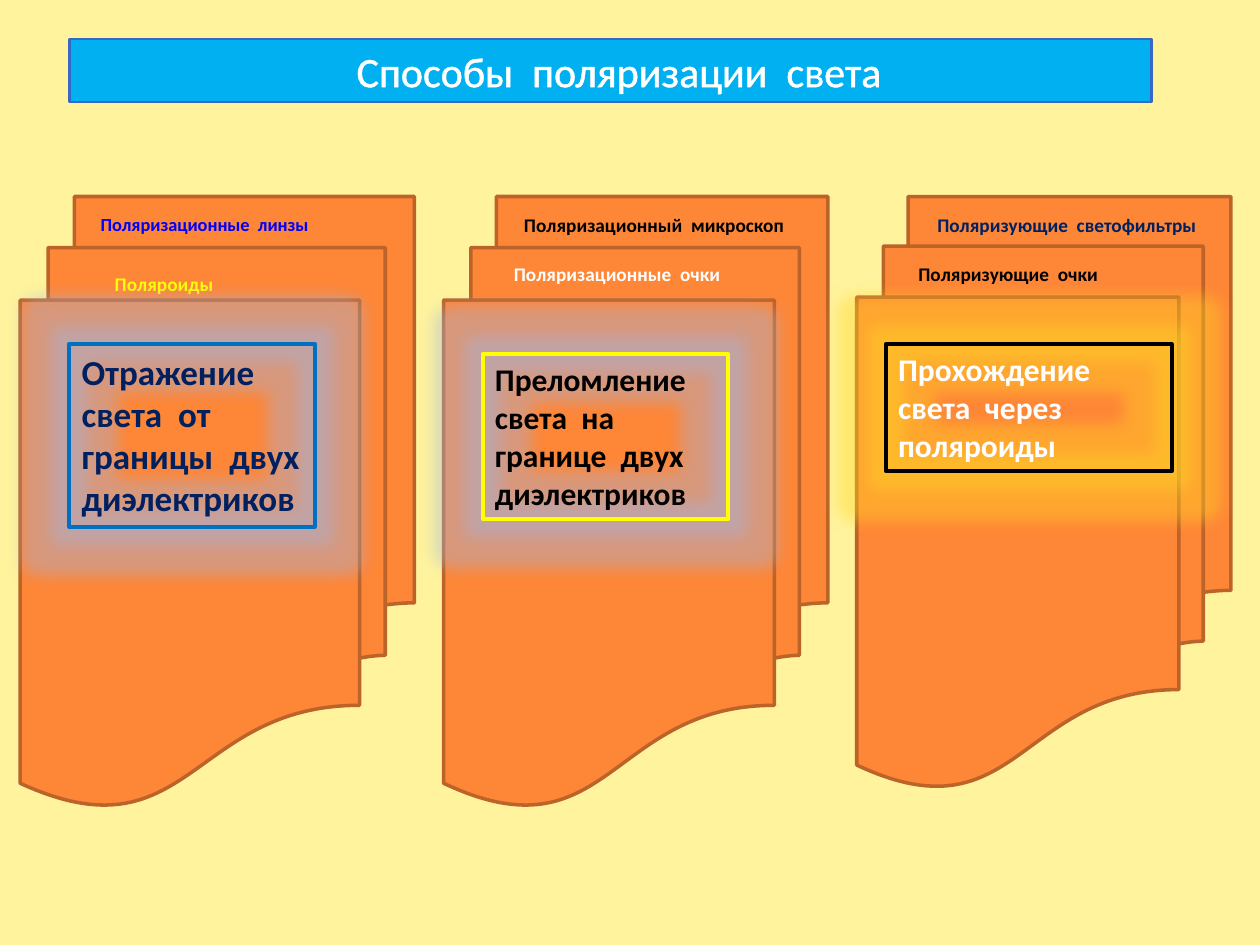
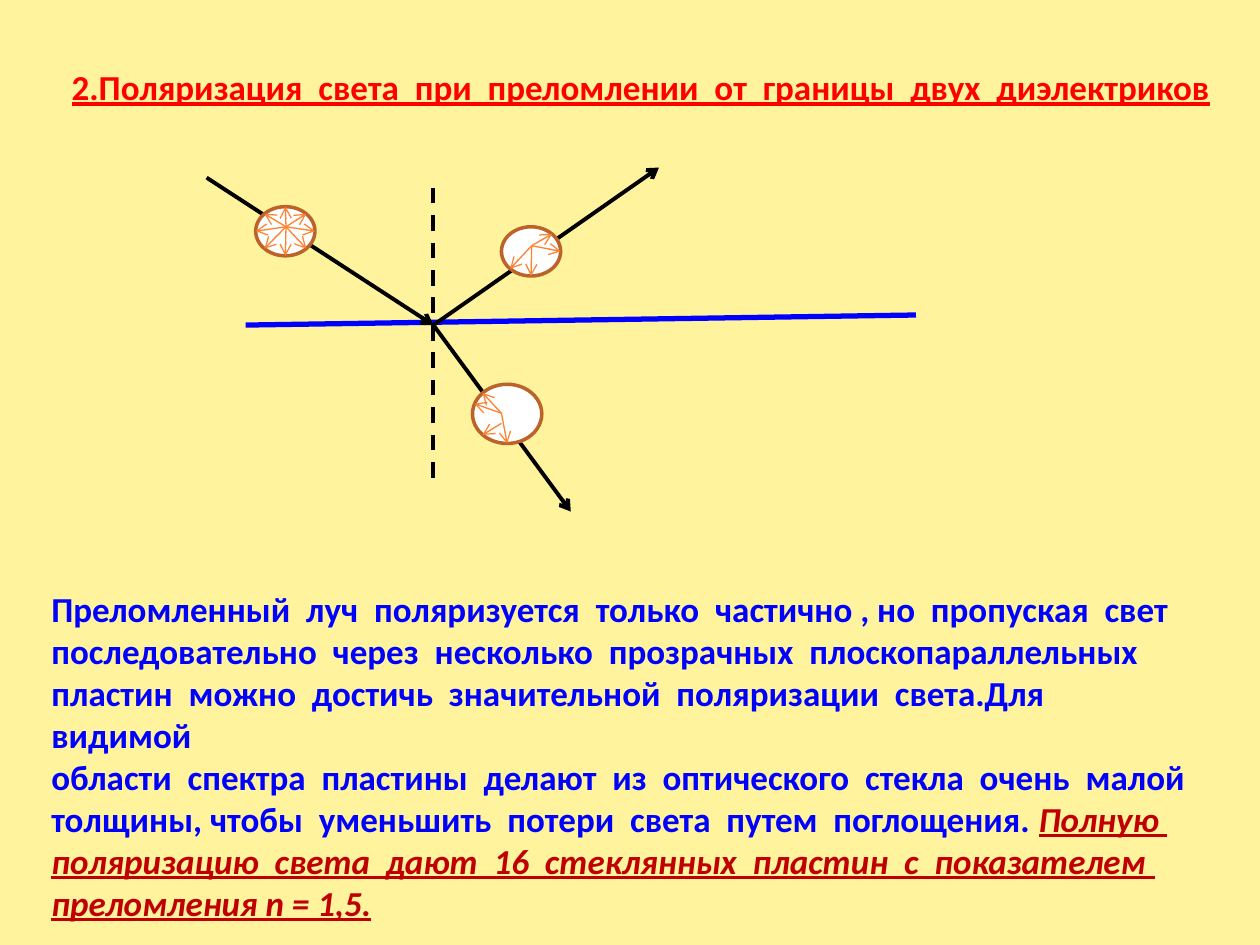
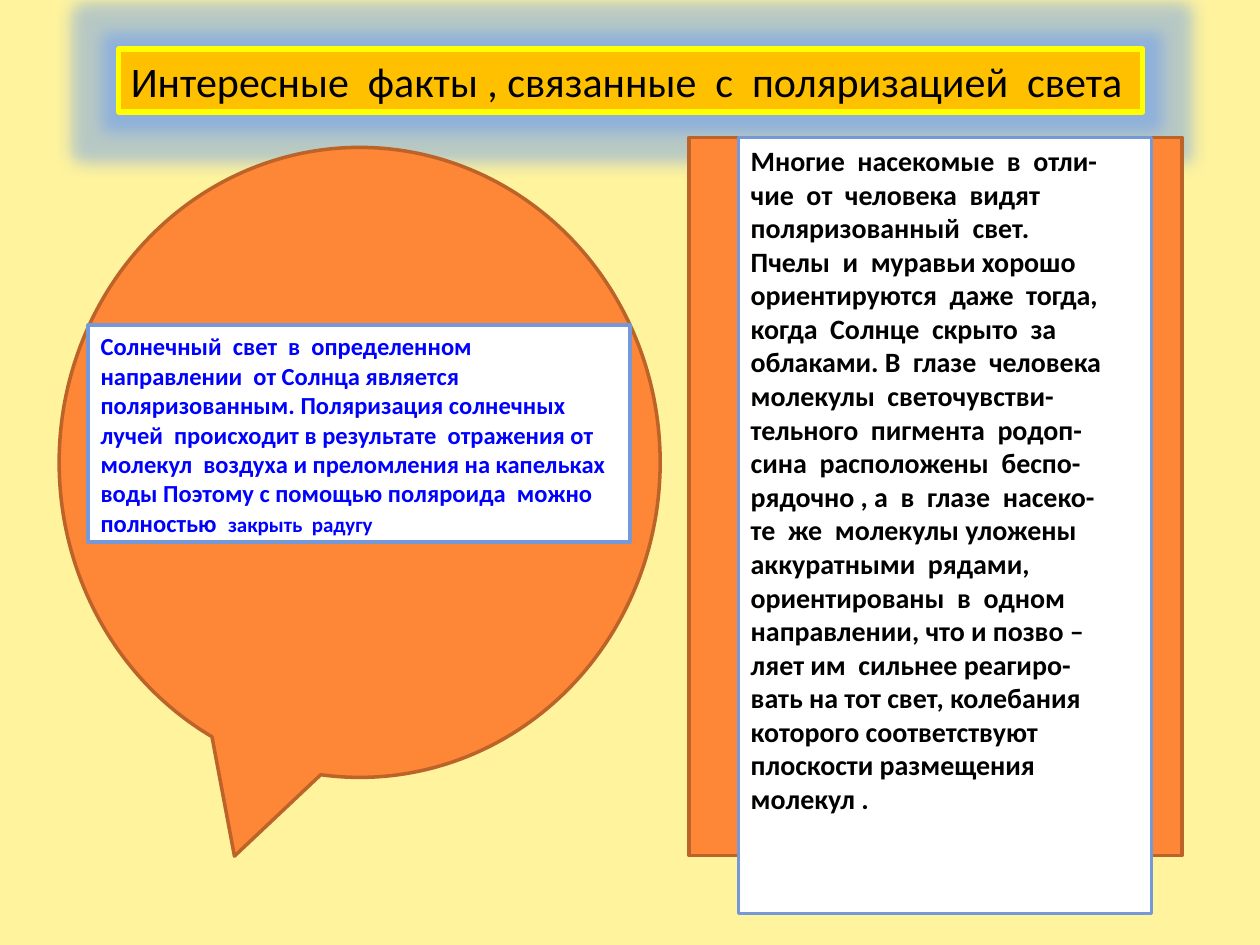
import math

import pptx
import pptx.dml.color
import pptx.enum.dml
import pptx.enum.shapes
import pptx.enum.text
import pptx.oxml
import pptx.oxml.ns
import pptx.util

RGB = pptx.dml.color.RGBColor
SHAPE = pptx.enum.shapes.MSO_SHAPE
qn = pptx.oxml.ns.qn

# Shared colours
PAPER = RGB(0xFF, 0xF3, 0x9D)
ORANGE = RGB(0xFE, 0x86, 0x37)
RUST = RGB(0xBC, 0x63, 0x29)
SPOKE = RGB(0xFD, 0x82, 0x31)
BLACK = RGB(0, 0, 0)
WHITE = RGB(0xFF, 0xFF, 0xFF)
BLUE = RGB(0, 0, 0xFF)
NAVY = RGB(0, 0x20, 0x60)
YELLOW = RGB(0xFF, 0xFF, 0)
RED = RGB(0xFF, 0, 0)
DARK_RED = RGB(0xC0, 0, 0)
SKY = RGB(0, 0xB0, 0xF0)
ROYAL = RGB(0x36, 0x68, 0xC4)
OCEAN = RGB(0, 0x70, 0xC0)
AMBER = RGB(0xFF, 0xC0, 0)
STEEL = RGB(0x75, 0x98, 0xD9)
BLUE_GLOW = RGB(0x4F, 0x8C, 0xFF)
PALE_GLOW = RGB(0xA0, 0xB5, 0xE4)
GOLD_GLOW = RGB(0xFF, 0xD8, 0x23)

# The slide is a grid of square cells
COLUMNS, ROWS = 100, 75
CELL = pptx.util.Inches(0.1)
PAGE = (0, 0, COLUMNS, ROWS)
FONT = "Calibri"
FIGURE = {"fill": ORANGE, "line": RUST, "width": 2}
NOTE = {"fill": WHITE, "line": STEEL, "width": 2}


def cells(*counts):
    return [round(count * CELL) for count in counts]


def within(box, left, top, width, height):
    """Box offset in cells from the corner of another box."""
    return box[0] + left, box[1] + top, width, height


def element(tag, **values):
    item = pptx.oxml.parse_xml(f"<a:{tag} {pptx.oxml.ns.nsdecls('a')}/>")
    for name, value in values.items():
        item.set(name, str(value))
    return item


def colour_element(colour, alpha=100):
    item = element("srgbClr", val=colour)
    if alpha < 100:
        item.append(element("alpha", val=alpha * 1000))
    return item


def write(frame, paragraphs, indent=0, **base):
    """Each paragraph is a string or a list of (string, changed format)."""
    frame.word_wrap = True
    frame.margin_left = pptx.util.Inches(0.1) + cells(indent)[0]
    frame.vertical_anchor = pptx.enum.text.MSO_ANCHOR.TOP
    for index, content in enumerate(paragraphs):
        para = frame.add_paragraph() if index else frame.paragraphs[0]
        para.alignment = pptx.enum.text.PP_ALIGN.LEFT
        for text, change in [(content, {})] if isinstance(content, str) else content:
            span = para.add_run()
            span.text = text
            values = {"name": FONT, **base, **change}
            span.font.color.rgb = values.pop("colour")
            values["size"] = pptx.util.Pt(values["size"])
            for name, value in values.items():
                setattr(span.font, name, value)


def add_text(page, box, paragraphs, **values):
    area = page.shapes.add_textbox(*cells(*box))
    write(area.text_frame, paragraphs, **values)


def add_figure(page, kind, box, line, width, fill=None, glow=None):
    figure = page.shapes.add_shape(kind, *cells(*box))
    if fill is None:
        figure.fill.background()
    else:
        figure.fill.solid()
        figure.fill.fore_color.rgb = fill
    figure.line.color.rgb = line
    figure.line.width = pptx.util.Pt(width)
    figure.shadow.inherit = False
    if glow is not None:
        halo = element("glow", rad=pptx.util.Pt(18))
        halo.append(colour_element(glow, 40))
        figure._element.spPr.find(qn("a:effectLst")).append(halo)
    return figure


def add_line(page, start, end, colour, width, arrow=False, dash=None):
    line = page.shapes.add_connector(
        pptx.enum.shapes.MSO_CONNECTOR.STRAIGHT, *cells(*start, *end))
    line.line.color.rgb = colour
    line.line.width = pptx.util.Pt(width)
    if dash is not None:
        line.line.dash_style = dash
    properties = line._element.spPr
    if arrow:
        properties.find(qn("a:ln")).append(element("tailEnd", type="arrow"))
    properties.append(element("effectLst"))


def new_page(deck):
    page = deck.slides.add_slide(deck.slide_layouts[6])
    page.background.fill.solid()
    page.background.fill.fore_color.rgb = PAPER
    return page


def add_banner(page, box, title, colour, indent=0, **style):
    banner = add_figure(page, SHAPE.RECTANGLE, box, **style)
    write(banner.text_frame, [title], indent, size=24, colour=colour)
    return banner


# Slide 1: three stacks of sheets
def add_stack(page, box, labels, statement):
    add_figure(page, SHAPE.FLOWCHART_MULTIDOCUMENT, box, **FIGURE)
    for left, top, text, values in labels:
        add_text(page, within(box, left, top, 24.2, 2.9), [text], bold=True, **values)
    area, text, values, frame = statement
    card = add_figure(page, SHAPE.RECTANGLE, within(box, *area), width=2.25, **frame)
    # The longest word nearly fills the card, so its right margin is narrow
    card.text_frame.margin_right = pptx.util.Inches(0.05)
    write(card.text_frame, [text], bold=True, **values)


def build_methods(deck):
    page = new_page(deck)
    banner = add_banner(page, within(PAGE, 5.5, 3.1, 85.9, 5), "Способы  поляризации  света",
                        WHITE, indent=21.8, fill=SKY, line=ROYAL, width=1.5)
    outline = element("ln", w=pptx.util.Pt(1.45))
    solid = element("solidFill")
    solid.append(colour_element(WHITE))
    outline.append(solid)
    banner.text_frame.paragraphs[0].runs[0].font._element.insert(0, outline)

    stacks = [
        ((1.6, 15.6, 31.3, 48.4),
         [(5.4, 0.8, "Поляризационные  линзы", {"size": 10.5, "colour": BLUE}),
          (4.6, 5.5, "Поляроиды", {"size": 11, "colour": YELLOW, "indent": 1.9})],
         ((3.9, 11.7, 19.5, 14.5), "Отражение  света  от  границы  двух  диэлектриков",
          {"size": 20, "colour": NAVY}, {"line": OCEAN, "glow": PALE_GLOW})),
        ((35.2, 15.6, 30.5, 48.4),
         [(5.4, 0.8, "Поляризационный  микроскоп", {"size": 11, "colour": BLACK}),
          (4.6, 4.7, "Поляризационные  очки", {"size": 11, "colour": WHITE})],
         ((3.1, 12.5, 19.5, 13.1), "Преломление  света  на  границе  двух  диэлектриков",
          {"size": 18, "colour": BLACK}, {"line": YELLOW, "glow": PALE_GLOW})),
        ((68, 15.6, 29.7, 46.9),
         [(5.4, 0.8, "Поляризующие  светофильтры", {"size": 11, "colour": NAVY}),
          (3.9, 4.7, "Поляризующие  очки", {"size": 11, "colour": BLACK})],
         ((2.3, 11.7, 22.7, 10.1), "Прохождение  света  через  поляроиды",
          {"size": 18, "colour": WHITE}, {"line": BLACK, "glow": GOLD_GLOW})),
    ]
    for stack in stacks:
        add_stack(page, *stack)


# Slide 2: rays at the boundary of two media
def add_spokes(page, box, origin, angles):
    """Arrows from the origin to points of the oval, angles clockwise."""
    left, top, width, height = box
    for angle in map(math.radians, angles):
        tip = (left + width / 2 * (1 + math.cos(angle)),
               top + height / 2 * (1 + math.sin(angle)))
        add_line(page, (left + origin[0], top + origin[1]), tip, SPOKE, 0.75, arrow=True)


def add_rays(page, box):
    def spot(across, down):
        return box[0] + across, box[1] + down

    meeting = spot(18, 12.5)
    add_line(page, spot(3.1, 12.5), spot(56.3, 11.7), BLUE, 3)
    rays = [(spot(0, 0.8), meeting), (meeting, spot(35.9, 0)), (meeting, spot(28.9, 27.3))]
    for start, end in rays:
        add_line(page, start, end, BLACK, 2.25, arrow=True)
    add_line(page, spot(18, 1.6), spot(18, 25), BLACK, 2.25,
             dash=pptx.enum.dml.MSO_LINE.DASH)

    # Oscillation directions in each ray
    incident = within(box, 3.9, 3.1, 4.7, 3.9)
    reflected = within(box, 23.4, 4.7, 4.7, 3.9)
    refracted = within(box, 21.1, 17.2, 5.5, 4.7)
    for oval in (incident, reflected, refracted):
        add_figure(page, SHAPE.OVAL, oval, fill=WHITE, line=RUST, width=2)
    add_spokes(page, incident, (2.4, 1.6), range(0, 360, 45))
    add_spokes(page, reflected, (2.4, 1.5), (-45, 0, 90, 135))
    add_spokes(page, refracted, (2.3, 2.3), (90, 200, 225))
    add_spokes(page, refracted, (2.3, 3.1), (135,))


def build_refraction(deck):
    page = new_page(deck)
    add_text(page, within(PAGE, 4.7, 4.7, 93.8, 4.4),
             ["2.Поляризация  света  при  преломлении  от  границы  двух  диэлектриков"],
             size=20, colour=RED, bold=True, underline=True)
    add_rays(page, within(PAGE, 16.4, 13.3, 56.3, 27.3))
    stress = {"colour": DARK_RED, "italic": True, "underline": True}
    add_text(page, within(PAGE, 3.1, 46.1, 93, 24.6), [
        "Преломленный  луч  поляризуется  только  частично , но  пропуская  свет",
        "последовательно  через  несколько  прозрачных  плоскопараллельных  "
        "пластин  можно  достичь  значительной  поляризации  света.Для  видимой",
        [("области  спектра  пластины  делают  из  оптического  стекла  очень  малой  "
          "толщины, чтобы  уменьшить  потери  света  путем  поглощения. ", {}),
         ("Полную  поляризацию  света  дают  16  стеклянных  пластин  с  показателем  "
          "преломления n = 1,5.", stress)],
    ], size=20, colour=BLUE, bold=True)


# Slide 3: facts, each a figure with a note over it
def add_fact(page, kind, box, note_area, paragraphs, **values):
    add_figure(page, kind, box, **FIGURE)
    note = add_figure(page, SHAPE.RECTANGLE, within(box, *note_area), **NOTE)
    write(note.text_frame, paragraphs, bold=True, **values)


def build_facts(deck):
    page = new_page(deck)
    add_banner(page, within(PAGE, 9.4, 3.9, 81.3, 5),
               "Интересные  факты , связанные  с  поляризацией  света", BLACK,
               fill=AMBER, line=YELLOW, width=3, glow=BLUE_GLOW)
    add_fact(page, SHAPE.OVAL_CALLOUT, within(PAGE, 4.7, 11.7, 47.7, 50),
             (2.3, 14.1, 43, 17.2), [[
                 ("Солнечный  свет  в  определенном направлении  от Солнца является "
                  "поляризованным. Поляризация солнечных   лучей  происходит в результате  "
                  "отражения от  молекул  воздуха и преломления на капельках  воды Поэтому "
                  "с помощью поляроида  можно полностью  ", {}),
                 ("закрыть  радугу", {"size": 12})]],
             size=14, colour=BLUE)
    add_fact(page, SHAPE.FLOWCHART_PREDEFINED_PROCESS, within(PAGE, 54.7, 10.9, 39.1, 57),
             (3.9, 0, 32.8, 61.6), [
                 "Многие  насекомые  в  отли-",
                 "чие  от  человека  видят",
                 "поляризованный  свет.",
                 "Пчелы  и  муравьи хорошо",
                 "ориентируются  даже  тогда,",
                 "когда  Солнце  скрыто  за",
                 "облаками. В  глазе  человека",
                 "молекулы  светочувстви-",
                 "тельного  пигмента  родоп-",
                 "сина  расположены  беспо-",
                 "рядочно , а  в  глазе  насеко-",
                 "те  же  молекулы уложены",
                 "аккуратными  рядами, ориентированы  в  одном",
                 "направлении, что и позво –",
                 "ляет им  сильнее реагиро-",
                 "вать на тот свет, колебания",
                 "которого соответствуют",
                 "плоскости размещения",
                 "молекул .",
             ], size=16, colour=BLACK)


def main():
    deck = pptx.Presentation()
    deck.slide_width, deck.slide_height = cells(COLUMNS, ROWS)
    for build in (build_methods, build_refraction, build_facts):
        build(deck)
    deck.save("out.pptx")


if __name__ == "__main__":
    main()
